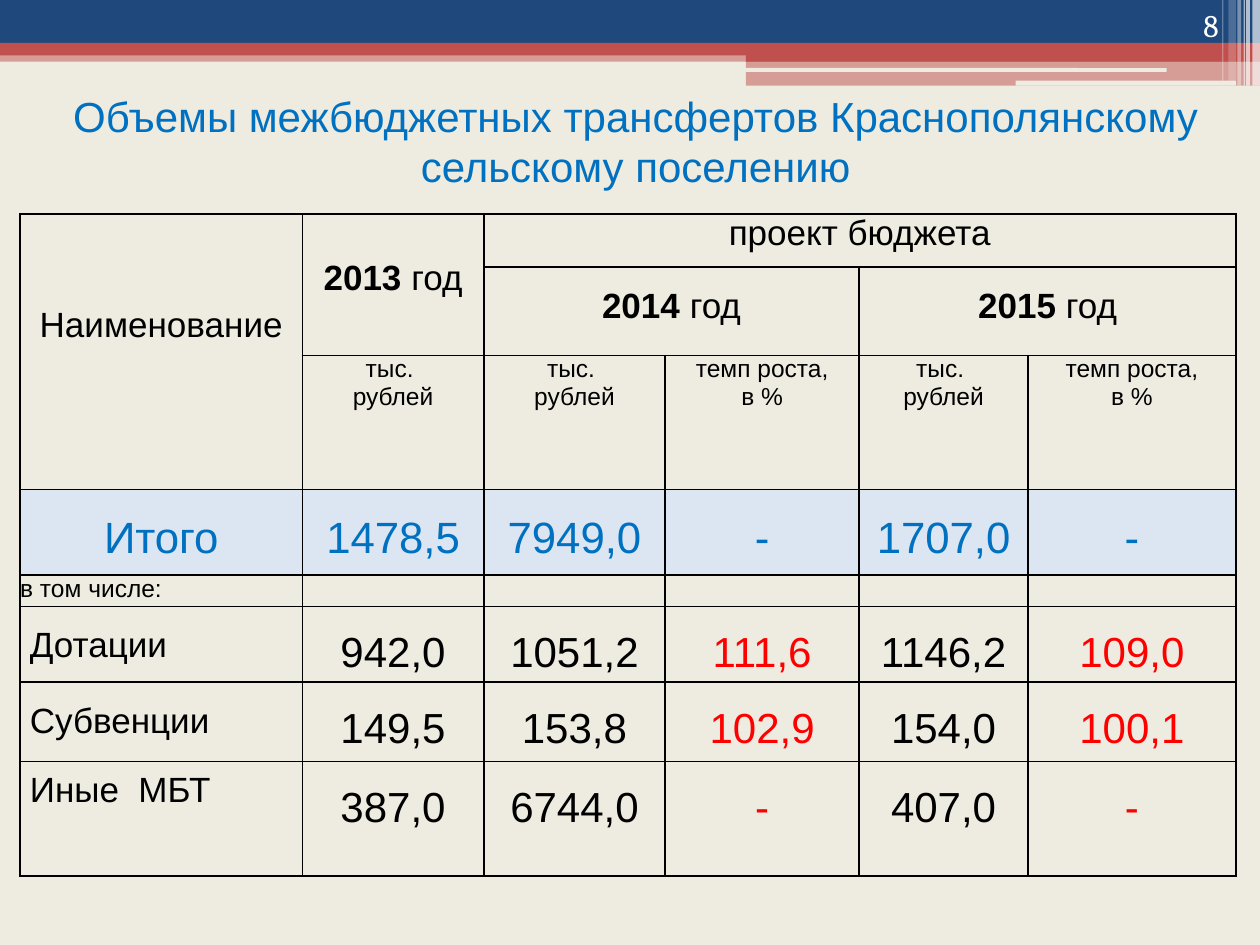
from dataclasses import dataclass

from lxml.etree import SubElement
from pptx import Presentation
from pptx.dml.color import RGBColor
from pptx.enum.shapes import MSO_SHAPE
from pptx.enum.text import MSO_ANCHOR, PP_ALIGN
from pptx.oxml.ns import qn
from pptx.util import Inches, Pt

COLORS = {
    "paper": "EEECE1", "navy": "1F497D", "brick": "C0504D", "white": "FFFFFF",
    "blue": "0070C0", "total": "DCE6F2", "black": "000000", "red": "FF0000",
}
HEADER_BARS = [
    (0, 40, 1000, 9, "brick", 50),
    (0, 0, 1000, 34, "navy", 100),
    (0, 34, 1000, 10, "brick", 100),
    (592, 39, 408, 10, "brick", 100),
    (592, 48, 408, 20, "brick", 50),
]
HEADER_SLOTS = [(591, 54, 335, 3), (806, 64, 175, 4)]
HEADER_STRIPES = [
    (994, 6, 68, 65), (989, 3, 68, 65), (987, 1, 68, 60),
    (982, 3, 68, 40), (975, 6, 64, 20), (970, 1, 64, 30),
]
COLUMN_WIDTHS = [2.24, 1.44, 1.44, 1.54, 1.34, 1.65]
ROW_HEIGHTS = [0.42, 0.68, 1.06, 0.68, 0.25, 0.58, 0.63, 0.91]
TOTALS = ["Итого", "1478,5", "7949,0", "-", "1707,0", "-"]
DETAILS = [
    (" Дотации", 1.5, ["942,0", "1051,2", "111,6", "1146,2", "109,0"]),
    (" Субвенции", 1.5, ["149,5", "153,8", "102,9", "154,0", "100,1"]),
    (" Иные  МБТ", 1.25, ["387,0", "6744,0", "-", "407,0", "-"]),
]
GROWTH_COLUMNS = (3, 5)


@dataclass
class Box:
    left: float
    top: float
    width: float
    height: float

    def area(self, columns, rows, left, top, width, height):
        column, row = self.width / columns, self.height / rows
        return Box(self.left + left * column, self.top + top * row,
                   width * column, height * row)

    def lengths(self):
        return [int(side) for side in (self.left, self.top, self.width, self.height)]


def color(name):
    return RGBColor.from_string(COLORS[name])


def add_bar(page, box, fill, opacity=100, preset=MSO_SHAPE.RECTANGLE):
    bar = page.shapes.add_shape(preset, *box.lengths())
    bar.shadow.inherit = False
    bar.line.fill.background()
    bar.fill.solid()
    bar.fill.fore_color.rgb = color(fill)
    if opacity < 100:
        shade = bar._element.spPr.find(qn("a:solidFill"))[0]
        SubElement(shade, qn("a:alpha")).set("val", str(opacity * 1000))


def add_span(para, text, size, tint="black", bold=False, font="Arial"):
    span = para.add_run()
    span.text = text
    span.font.size = Pt(size)
    span.font.name = font
    span.font.bold = bold
    span.font.color.rgb = color(tint)


def add_text(page, box, text, size, tint, font, align, anchor):
    frame = page.shapes.add_textbox(*box.lengths()).text_frame
    frame.word_wrap = True
    frame.vertical_anchor = anchor
    para = frame.paragraphs[0]
    para.alignment = align
    add_span(para, text, size, tint, font=font)


def draw_header(page, box):
    for *place, fill, opacity in HEADER_BARS:
        add_bar(page, box.area(1000, 68, *place), fill, opacity)
    for place in HEADER_SLOTS:
        add_bar(page, box.area(1000, 68, *place), "paper",
                preset=MSO_SHAPE.ROUNDED_RECTANGLE)
    for left, width, height, opacity in HEADER_STRIPES:
        add_bar(page, box.area(1000, 68, left, 0, width, height), "white", opacity)


def style_cell(cell, fill=None):
    cell.margin_left = cell.margin_right = cell.margin_top = cell.margin_bottom = 0
    properties = cell._tc.get_or_add_tcPr()
    for side in ("lnL", "lnR", "lnT", "lnB"):
        line = SubElement(properties, qn(f"a:{side}"), w=str(int(Pt(1))))
        paint = SubElement(line, qn("a:solidFill"))
        SubElement(paint, qn("a:srgbClr"), val=COLORS["black"])
    if fill:
        cell.fill.solid()
        cell.fill.fore_color.rgb = color(fill)
    else:
        cell.fill.background()


def write_cell(cell, lines, size, tint="black", spacing=None, align=PP_ALIGN.CENTER):
    frame = cell.text_frame
    for index, spans in enumerate(lines):
        para = frame.add_paragraph() if index else frame.paragraphs[0]
        para.alignment = align
        if spacing:
            para.line_spacing = spacing
        for text, bold in spans:
            add_span(para, text, size, tint, bold)


def fill_headings(table):
    table.cell(0, 0).merge(table.cell(2, 0))
    table.cell(0, 1).merge(table.cell(1, 1))
    table.cell(0, 2).merge(table.cell(0, 5))
    table.cell(0, 0).margin_top = Inches(0.73)
    table.cell(0, 1).margin_top = Inches(0.2)
    write_cell(table.cell(0, 0), [[("Наименование", False)]], 20)
    write_cell(table.cell(0, 1), [[("2013", True), (" год", False)]], 20, spacing=1.5)
    write_cell(table.cell(0, 2), [[("проект бюджета", False)]], 20)
    for column, year in ((2, "2014 "), (4, "2015 ")):
        table.cell(1, column).merge(table.cell(1, column + 1))
        write_cell(table.cell(1, column), [[(year, True), ("год", False)]], 20,
                   spacing=1.5)
    for column in range(1, 6):
        unit = ("темп роста,", "в %") if column in GROWTH_COLUMNS else ("тыс. ", "рублей")
        write_cell(table.cell(2, column), [[(text, False)] for text in unit], 14)


def fill_amounts(table):
    for column, text in enumerate(TOTALS):
        write_cell(table.cell(3, column), [[(text, False)]], 25, "blue", 1.5)
    write_cell(table.cell(4, 0), [[("в том числе:", False)]], 14, align=PP_ALIGN.LEFT)
    for column in range(1, 6):
        para = table.cell(4, column).text_frame.paragraphs[0]
        SubElement(para._p, qn("a:endParaRPr"), sz="1400")
    for row, (name, spacing, amounts) in enumerate(DETAILS, 5):
        write_cell(table.cell(row, 0), [[(name, False)]], 20, spacing=spacing,
                   align=PP_ALIGN.LEFT)
        for column, amount in enumerate(amounts, 1):
            tint = "red" if column in GROWTH_COLUMNS else "black"
            write_cell(table.cell(row, column), [[(amount, False)]], 24, tint, 1.5)


def draw_budget_table(page, box):
    table = page.shapes.add_table(len(ROW_HEIGHTS), len(COLUMN_WIDTHS),
                                  *box.lengths()).table
    table.first_row = table.horz_banding = False
    for column, share in zip(table.columns, COLUMN_WIDTHS):
        column.width = int(box.width * share / sum(COLUMN_WIDTHS))
    for row, share in zip(table.rows, ROW_HEIGHTS):
        row.height = int(box.height * share / sum(ROW_HEIGHTS))
    for index, row in enumerate(table.rows):
        for cell in row.cells:
            style_cell(cell, "total" if index == 3 else None)
    fill_headings(table)
    fill_amounts(table)


def main():
    deck = Presentation()
    deck.slide_width, deck.slide_height = Inches(10), Inches(7.5)
    page = deck.slides.add_slide(deck.slide_layouts[6])
    page.background.fill.solid()
    page.background.fill.fore_color.rgb = color("paper")
    whole = Box(0, 0, deck.slide_width, deck.slide_height)
    grid = (1000, 750)
    draw_header(page, whole.area(*grid, 0, 0, 1000, 68))
    add_text(page, whole.area(*grid, 20, 76, 969, 71),
             "Объемы межбюджетных трансфертов Краснополянскому сельскому поселению",
             24, "blue", "Arial", PP_ALIGN.CENTER, MSO_ANCHOR.MIDDLE)
    draw_budget_table(page, whole.area(*grid, 16, 170, 965, 521))
    add_text(page, whole.area(*grid, 894, 0, 83, 40), "8", 18, "white", "Cambria",
             PP_ALIGN.RIGHT, MSO_ANCHOR.BOTTOM)
    deck.save("out.pptx")


if __name__ == "__main__":
    main()
